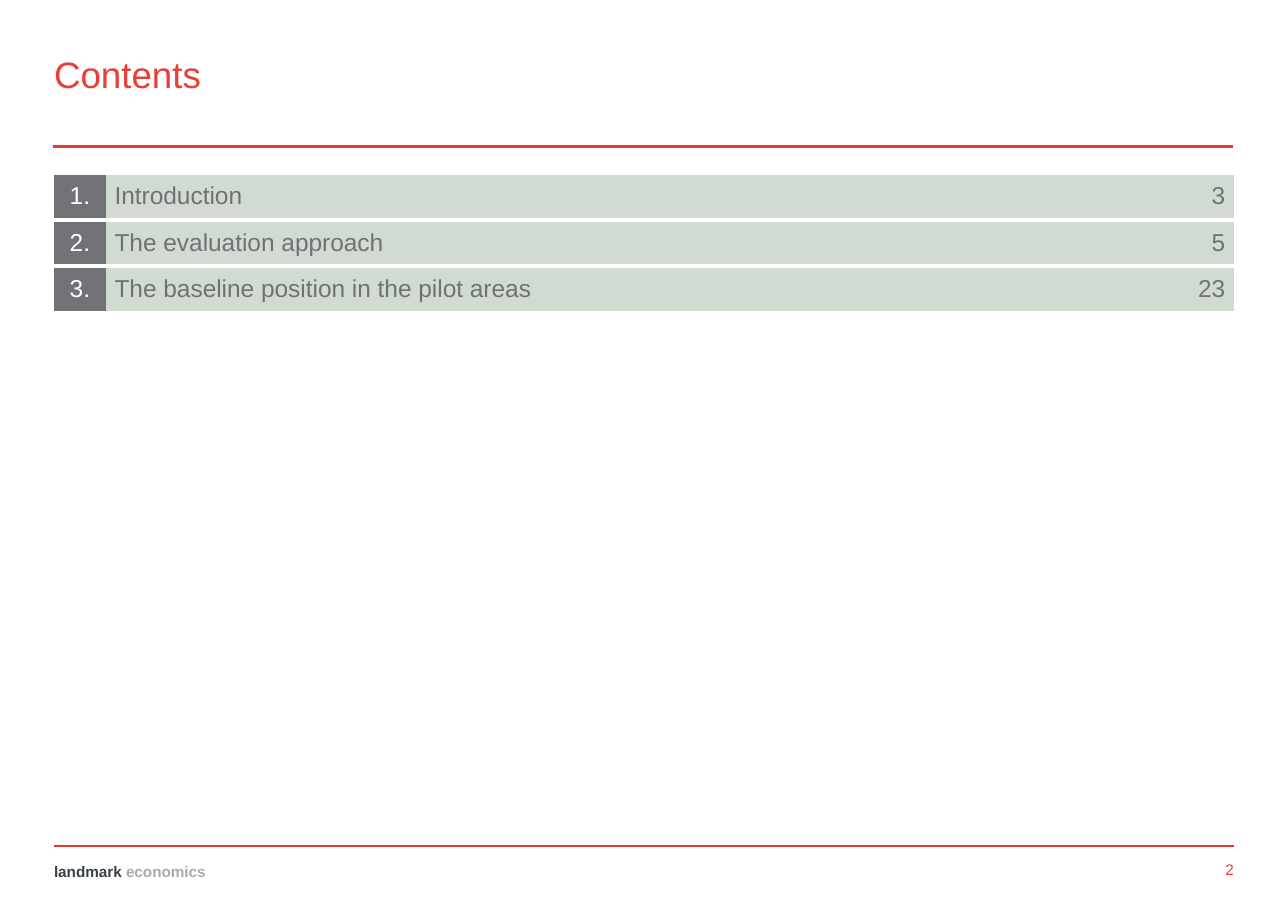
from lxml import etree
from pptx import Presentation
from pptx.dml.color import RGBColor
from pptx.enum.shapes import MSO_CONNECTOR
from pptx.enum.text import MSO_ANCHOR as ANCHOR, PP_ALIGN as ALIGN
from pptx.oxml import parse_xml
from pptx.oxml.ns import nsdecls, qn
from pptx.util import Inches, Pt

COLORS = {
    "rule": "E73A2F", "accent": "E83F35", "brand": "37424A", "brand_light": "A9AAAD",
    "dark": "707276", "pale": "D1DBD2", "white": "FFFFFF",
}
SECTIONS = [
    ("1.", "Introduction", "3"),
    ("2.", "The evaluation approach", "5"),
    ("3.", "The baseline position in the pilot areas", "23"),
]


def rgb(name):
    return RGBColor.from_string(COLORS[name])


def style(font, size, color, bold=False):
    font.name, font.size, font.bold = "Arial", Pt(size), bold
    font.color.rgb = rgb(color)


def set_frame(frame, anchor, wrap):
    frame.margin_left = frame.margin_right = frame.margin_top = frame.margin_bottom = 0
    frame.vertical_anchor, frame.word_wrap = anchor, wrap
    paragraph = frame.paragraphs[0]
    paragraph.space_before = paragraph.space_after = Pt(2)
    return paragraph


def add_rule(slide, left, top, width):
    rule = slide.shapes.add_connector(
        MSO_CONNECTOR.STRAIGHT, Inches(left), Inches(top), Inches(left + width), Inches(top))
    rule.line.color.rgb = rgb("rule")
    rule.line.width = Pt(1.5)
    etree.SubElement(rule._element.spPr, qn("a:effectLst"))


def add_header(slide, left, top, width):
    title = slide.shapes.title
    title.left, title.top = Inches(left), Inches(top)
    title.width, title.height = Inches(width), Inches(0.4)
    heading = set_frame(title.text_frame, ANCHOR.TOP, True)
    heading.text, heading.alignment = "Contents", ALIGN.LEFT
    style(heading.font, 24, "accent")
    add_rule(slide, left - 0.01, top + 0.86, width)


def add_footer(slide, left, top, width):
    add_rule(slide, left, top, width)
    brand_box = slide.shapes.add_textbox(
        Inches(left), Inches(top + 0.11), Inches(1.38), Inches(0.2))
    brand = set_frame(brand_box.text_frame, ANCHOR.BOTTOM, False)
    for word, color in (("landmark ", "brand"), ("economics", "brand_light")):
        run = brand.add_run()
        run.text = word
        style(run.font, 10, color, True)

    number_box = slide.shapes.add_textbox(
        Inches(left + width - 0.3), Inches(top + 0.1), Inches(0.3), Inches(0.2))
    number = set_frame(number_box.text_frame, ANCHOR.BOTTOM, False)
    number.text, number.alignment = "2", ALIGN.RIGHT
    style(number.font, 10, "accent")


def set_borders(cell):
    """White lines above and below the cell, none at its sides."""
    white = f'<a:solidFill><a:srgbClr val="{COLORS["white"]}"/></a:solidFill>'
    sides = (("lnL", "<a:noFill/>"), ("lnR", "<a:noFill/>"), ("lnT", white), ("lnB", white))
    properties = cell._tc.get_or_add_tcPr()
    for place, (side, fill) in enumerate(sides):
        border = f'<a:{side} {nsdecls("a")} w="{Pt(3)}">{fill}</a:{side}>'
        properties.insert(place, parse_xml(border))


def add_contents(slide, left, top, width, height):
    number_width, page_width = 0.47, 0.65
    columns = (
        (number_width, ALIGN.CENTER, "white", "dark"),
        (width - number_width - page_width, ALIGN.LEFT, "dark", "pale"),
        (page_width, ALIGN.RIGHT, "dark", "pale"),
    )
    contents = slide.shapes.add_table(
        len(SECTIONS), len(columns),
        Inches(left), Inches(top), Inches(width), Inches(height)).table
    contents.first_row = contents.horz_banding = False
    for col, (col_width, alignment, color, fill) in enumerate(columns):
        contents.columns[col].width = Inches(col_width)
        for row, section in enumerate(SECTIONS):
            cell = contents.cell(row, col)
            cell.margin_left = cell.margin_right = Inches(0.08)
            cell.margin_top = cell.margin_bottom = Inches(0.08)
            cell.vertical_anchor = ANCHOR.MIDDLE
            cell.fill.solid()
            cell.fill.fore_color.rgb = rgb(fill)
            set_borders(cell)
            entry = cell.text_frame.paragraphs[0]
            entry.text, entry.alignment = section[col], alignment
            style(entry.font, 16, color)


def main():
    deck = Presentation()
    deck.slide_width, deck.slide_height = Inches(11.69), Inches(8.27)
    slide = deck.slides.add_slide(deck.slide_layouts[5])
    left, width = 0.49, 10.71
    add_header(slide, left, 0.47, width)
    add_contents(slide, left, 1.57, width, 1.27)
    add_footer(slide, left, 7.68, width)
    deck.save("out.pptx")


if __name__ == "__main__":
    main()
